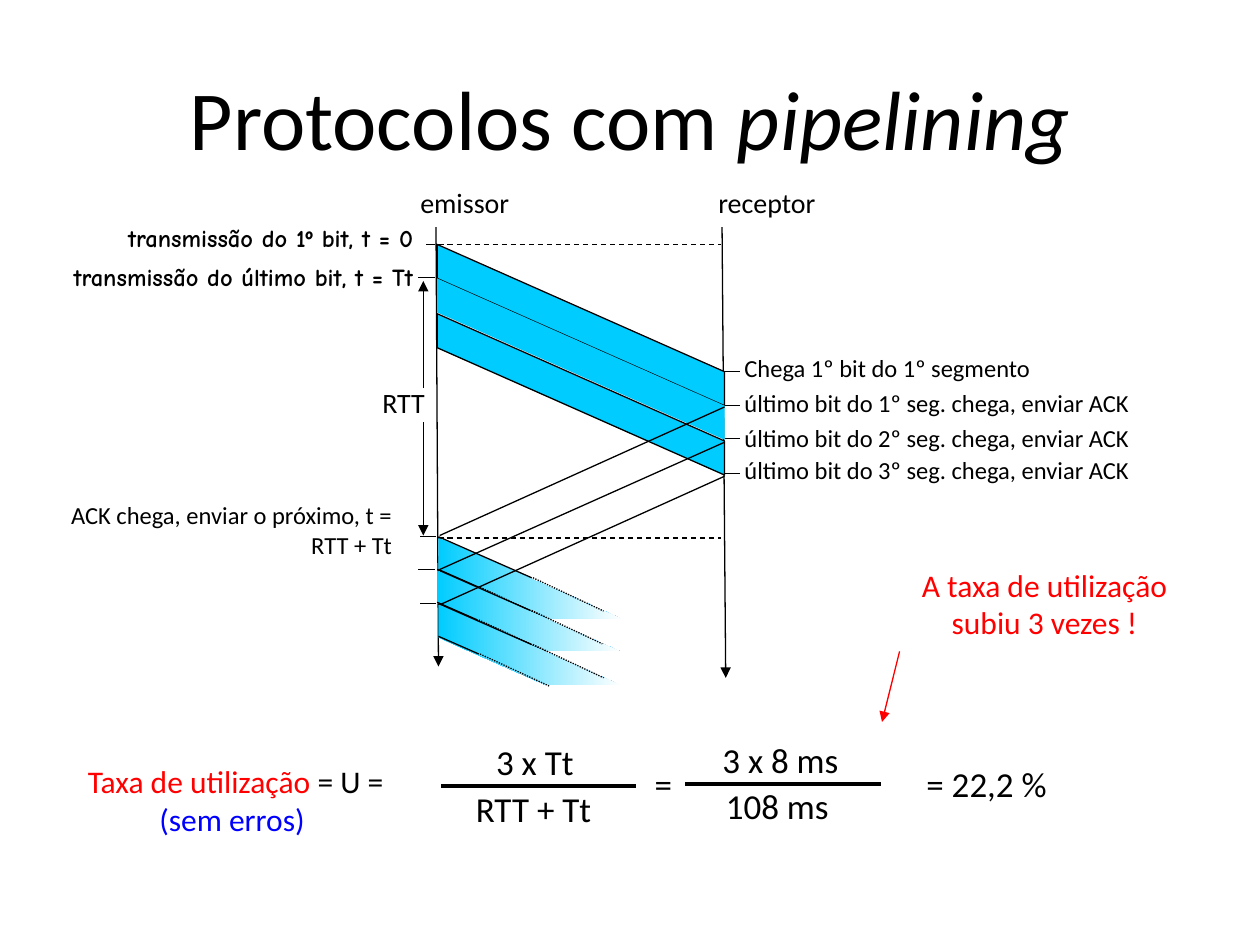
from lxml import etree
from pptx import Presentation
from pptx import util as u
from pptx.dml.color import RGBColor
from pptx.enum import dml, shapes, text
from pptx.oxml import ns

COLORS = {"black": "000000", "white": "FFFFFF", "cyan": "00CCFF",
          "red": "FF0000", "blue": "0000FF"}
LEFT, CENTER, RIGHT = (text.PP_ALIGN.LEFT, text.PP_ALIGN.CENTER,
                       text.PP_ALIGN.RIGHT)
DASH, DOT = dml.MSO_LINE.DASH, dml.MSO_LINE.ROUND_DOT
SENDER, RECEIVER = 3.47, 5.75
FLIGHT, DROP, THICK = 2.28, 1.01, 0.27


def rgb(name):
    return RGBColor.from_string(COLORS[name])


def add_line(target, start, end, color="black", width=0.75, dash=None,
             arrow=False):
    points = [u.Inches(value) for value in (*start, *end)]
    line = target.add_connector(shapes.MSO_CONNECTOR.STRAIGHT, *points)
    line.line.color.rgb = rgb(color)
    line.line.width = u.Pt(width)
    if dash:
        line.line.dash_style = dash
    if arrow:
        outline = line.line._get_or_add_ln()
        etree.SubElement(outline, ns.qn("a:tailEnd"), type="triangle")
    etree.SubElement(line._element.spPr, ns.qn("a:effectLst"))


def add_text(target, at, lines, size=14, align=LEFT, wrap=True, fill=None,
             anchor=text.MSO_ANCHOR.TOP, **font):
    """Add a text box; each line is a list of (words, font values) spans."""
    if isinstance(lines, str):
        lines = [[(lines, {})]]
    box = target.add_textbox(*(u.Inches(value) for value in at))
    if fill:
        box.fill.solid()
        box.fill.fore_color.rgb = rgb(fill)
    frame = box.text_frame
    frame.word_wrap = wrap
    frame.vertical_anchor = anchor
    for index, spans in enumerate(lines):
        para = frame.add_paragraph() if index else frame.paragraphs[0]
        para.alignment = align
        for words, own in spans:
            span = para.add_run()
            span.text = words
            values = {"name": "Calibri", "size": u.Pt(size),
                      "color": "black", **font, **own}
            span.font.color.rgb = rgb(values.pop("color"))
            for key, value in values.items():
                setattr(span.font, key, value)


def add_polygon(target, points, outlined=False, fading=False):
    corners = [(u.Inches(x), u.Inches(y)) for x, y in points]
    builder = target.build_freeform(*corners[0], scale=1.0)
    builder.add_line_segments(corners[1:], close=True)
    shape = builder.convert_to_shape()
    shape.shadow.inherit = False
    if fading:
        shape.fill.gradient()
        shape.fill.gradient_angle = 0
        for stop, name in zip(shape.fill.gradient_stops, ("cyan", "white")):
            stop.color.rgb = rgb(name)
    else:
        shape.fill.solid()
        shape.fill.fore_color.rgb = rgb("cyan")
    if outlined:
        shape.line.color.rgb = rgb("black")
        shape.line.width = u.Pt(0.75)
    else:
        shape.line.fill.background()


def add_segment(target, top, outlined):
    """Draw one segment travelling from sender to receiver."""
    right = SENDER + FLIGHT
    add_polygon(target, [(SENDER, top), (right, top + DROP),
                         (right, top + DROP + THICK), (SENDER, top + THICK)],
                outlined)


def add_next_segment(page, x, y):
    """Draw the start of a segment sent after an ACK, fading out."""
    group = page.shapes.add_group_shape().shapes
    add_line(group, (x - 0.02, y - 0.01), (x - 0.15, y - 0.01))
    add_polygon(group, [(x, y), (x + 1.45, y + 0.64), (x + 0.86, y + 0.64),
                        (x, y + 0.26)], fading=True)
    for top, bend, end in ((-0.01, 0.74, 1.31), (0.25, 0.32, 0.88)):
        middle = y + top + bend * 0.44
        add_line(group, (x, y + top), (x + bend, middle))
        add_line(group, (x + bend + 0.01, middle),
                 (x + end, y + top + end * 0.45), dash=DOT)


def add_fraction(page, left, y, above, below):
    group = page.shapes.add_group_shape().shapes
    for words, at in (above, below):
        add_text(group, at, words, 20, CENTER, wrap=False)
    add_line(group, (left, y), (left + 1.55, y), width=2.25)


def add_timelines(page):
    target = page.shapes
    add_line(target, (3.46, 1.7), (3.48, 5.29), arrow=True)
    add_line(target, (5.73, 1.72), (5.76, 5.38), arrow=True)
    for y in (1.94, 4.27):
        add_line(target, (3.48, y), (5.72, y), dash=DASH)
    for top, outlined in ((1.94, True), (2.21, False), (2.49, True)):
        add_segment(target, top, outlined)
    for y in (1.94, 2.2):
        add_line(target, (3.45, y), (3.32, y))
    for y in (2.95, 3.22, 3.48, 3.76):
        add_line(target, (RECEIVER, y), (5.87, y))
    for x, y in ((3.48, 4.27), (3.47, 4.53), (3.48, 4.8)):
        add_next_segment(page, x, y)
    for sent, received in ((3.23, 4.25), (3.51, 4.52), (3.78, 4.8)):
        add_line(target, (3.49, received), (RECEIVER, sent))
    add_line(target, (3.36, 3.35), (3.36, 4.25), arrow=True)
    add_line(target, (3.36, 3.08), (3.36, 2.23), arrow=True)


def add_labels(page):
    target = page.shapes
    for at, words in (((2.92, 1.42, 1.22, 0.38), "emissor"),
                      ((5.25, 1.42, 1.32, 0.38), "receptor")):
        add_text(target, at, words, 16, RIGHT, fill="white")
    for y, words, fill in ((1.72, "transmissão do 1º bit, t = 0", "white"),
                           (2.03, "transmissão do último bit, t = Tt", None)):
        add_text(target, (0, y, 3.38, 0.39), words, align=RIGHT, fill=fill,
                 name="Comic Neue", bold=True)
    add_text(target, (2.46, 3.01, 1.06, 0.37), "RTT ", 16, RIGHT)
    add_text(target, (0.33, 3.92, 2.88, 0.7),
             "ACK chega, enviar o próximo, t = RTT + Tt", align=RIGHT)
    add_text(target, (5.81, 2.75, 3.53, 0.39), "Chega 1º bit do 1º segmento")
    for number, y in enumerate((3.03, 3.31, 3.56), 1):
        add_text(target, (5.81, y, 4.19, 0.42),
                 f"último bit do {number}º seg. chega, enviar ACK")


def add_utilization(page):
    target = page.shapes
    add_text(target, (7.13, 4.44, 2.32, 0.71),
             [[("A taxa de utilização", {})], [("subiu 3 vezes !", {})]],
             18, CENTER, wrap=False, color="red")
    add_line(target, (7.14, 5.17), (7, 5.73), "red", arrow=True)
    add_text(target, (0.46, 6, 2.82, 0.71),
             [[("Taxa de utilização", {"color": "red"}), (" = U =", {})],
              [("(sem erros) ", {"color": "blue"})]],
             18, CENTER, wrap=False)
    add_fraction(page, 3.5, 6.24, ("3 x Tt", (3.82, 5.83, 0.85, 0.44)),
                 ("RTT + Tt", (3.67, 6.2, 1.13, 0.44)))
    add_text(target, (5.07, 6, 0.39, 0.44), "=", 20, CENTER, wrap=False)
    add_fraction(page, 5.44, 6.22, ("3 x 8 ms", (5.61, 5.81, 1.17, 0.44)),
                 ("108 ms", (5.64, 6.18, 1.06, 0.44)))
    add_text(target, (7.17, 6, 1.32, 0.43), "= 22,2 %", 20, CENTER, wrap=False)


def main():
    deck = Presentation()
    deck.slide_width, deck.slide_height = u.Inches(10), u.Inches(7.5)
    page = deck.slides.add_slide(deck.slide_layouts[6])
    add_text(page.shapes, (0.5, 0.3, 9, 1.25),
             [[("Protocolos com ", {}), ("pipelining", {"italic": True})]],
             48, CENTER, anchor=text.MSO_ANCHOR.MIDDLE)
    add_timelines(page)
    add_labels(page)
    add_utilization(page)
    deck.save("out.pptx")


if __name__ == "__main__":
    main()
